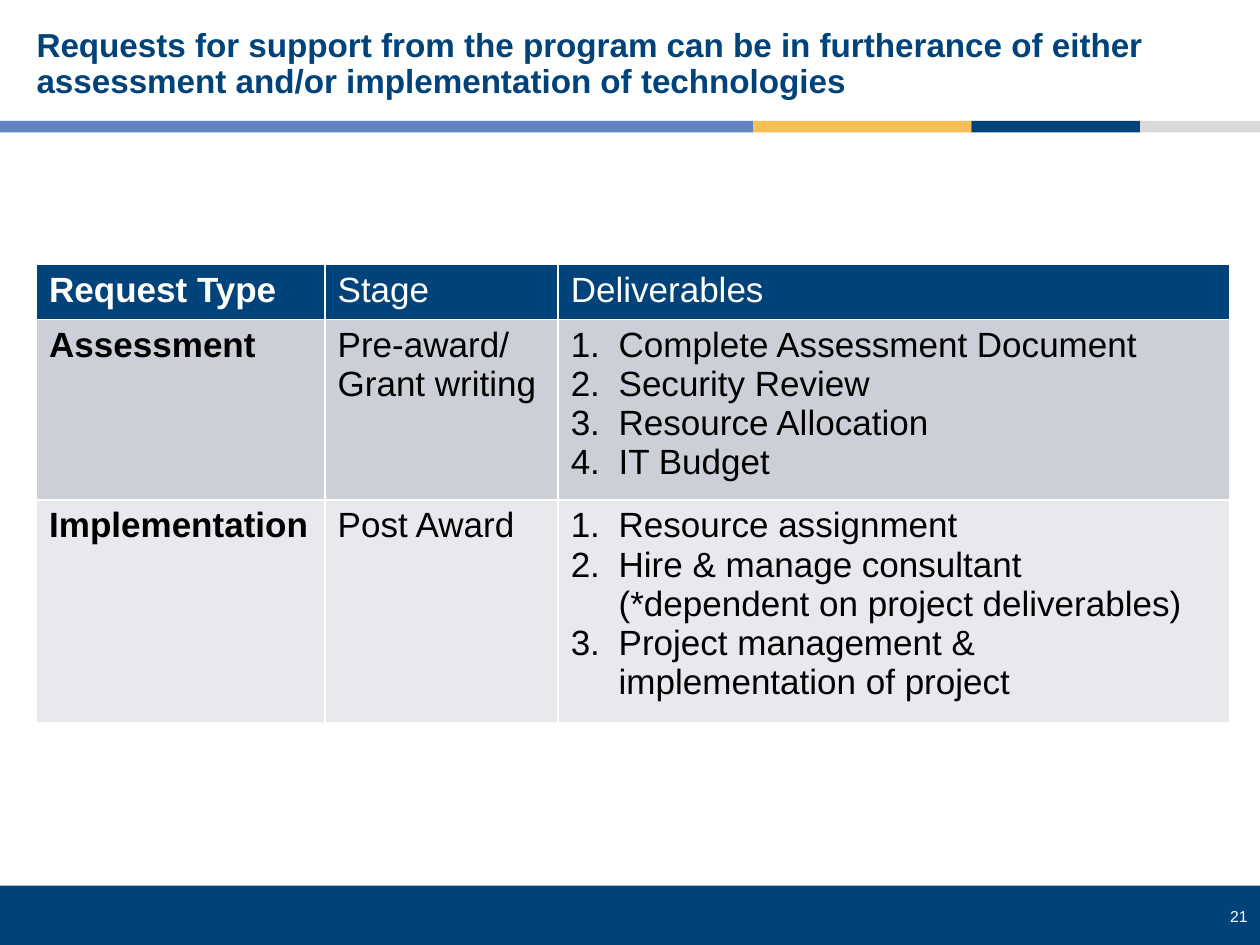
"""Build the slide on assessment and implementation requests."""
from lxml.etree import SubElement
from pptx import Presentation
from pptx.dml.color import RGBColor
from pptx.enum.shapes import MSO_SHAPE
from pptx.enum.text import MSO_ANCHOR, MSO_AUTO_SIZE, PP_ALIGN
from pptx.oxml.ns import qn
from pptx.util import Inches, Pt

NAVY, BLUE, GOLD, GREY = "00437B", "6283C2", "F8BF56", "D9D9D9"
WHITE, BLACK = "FFFFFF", "000000"


def color(value):
    return RGBColor.from_string(value)


def style(paragraph, size, value, bold=False):
    font = paragraph.font
    font.name, font.size, font.bold = "Arial", Pt(size), bold
    font.color.rgb = color(value)


presentation = Presentation()
presentation.slide_width = Inches(10)
presentation.slide_height = Inches(7.5)
slide = presentation.slides.add_slide(presentation.slide_layouts[5])

bands = [
    (0, 7.03, 10, 0.47, NAVY),
    (0, 0.96, 5.98, 0.09, BLUE),
    (5.98, 0.96, 1.73, 0.09, GOLD),
    (7.71, 0.96, 1.34, 0.09, NAVY),
    (9.05, 0.96, 0.95, 0.09, GREY),
]
for left, top, width, height, fill in bands:
    band = slide.shapes.add_shape(
        MSO_SHAPE.RECTANGLE, Inches(left), Inches(top), Inches(width), Inches(height)
    )
    band.shadow.inherit = False
    band.fill.solid()
    band.fill.fore_color.rgb = color(fill)
    band.line.fill.background()

title = slide.shapes.title
title.left, title.top = Inches(0.19), Inches(0.17)
title.width, title.height = Inches(9.57), Inches(0.69)
title.text_frame.text = (
    "Requests for support from the program can be in furtherance of either "
    "assessment and/or implementation of technologies"
)
title.text_frame.auto_size = MSO_AUTO_SIZE.NONE
title.text_frame.vertical_anchor = MSO_ANCHOR.MIDDLE
paragraph = title.text_frame.paragraphs[0]
paragraph.alignment = PP_ALIGN.LEFT
paragraph.line_spacing = 0.9
style(paragraph, 19, NAVY, True)

number = slide.shapes.add_textbox(Inches(9.31), Inches(7.15), Inches(0.69), Inches(0.25))
number.text_frame.word_wrap = True
number.text_frame.text = "21"
paragraph = number.text_frame.paragraphs[0]
paragraph.alignment = PP_ALIGN.RIGHT
style(paragraph, 9, WHITE)

rows = [
    ("Request Type", "Stage", "Deliverables"),
    (
        "Assessment",
        "Pre-award/\nGrant writing",
        "Complete Assessment Document\nSecurity Review\nResource Allocation\nIT Budget",
    ),
    (
        "Implementation",
        "Post Award",
        "Resource assignment\n"
        "Hire & manage consultant (*dependent on project deliverables)\n"
        "Project management & implementation of project",
    ),
]
row_fills = [NAVY, "CCCFD7", "E7E9EC"]
table = slide.shapes.add_table(
    3, 3, Inches(0.29), Inches(2.1), Inches(9.47), Inches(3.39)
).table
for column, width in zip(table.columns, (2.29, 1.85, 5.33)):
    column.width = Inches(width)
for row, height in zip(table.rows, (0.41, 1.34, 1.64)):
    row.height = Inches(height)

for row_index, texts in enumerate(rows):
    for column_index, text in enumerate(texts):
        cell = table.cell(row_index, column_index)
        cell.text = text
        properties = cell._tc.get_or_add_tcPr()
        for side in ("a:lnL", "a:lnR", "a:lnT", "a:lnB"):
            border = SubElement(properties, qn(side), w=str(Pt(1)))
            border_fill = SubElement(border, qn("a:solidFill"))
            SubElement(border_fill, qn("a:srgbClr"), val=WHITE)
        cell.fill.solid()
        cell.fill.fore_color.rgb = color(row_fills[row_index])
        for paragraph in cell.text_frame.paragraphs:
            if row_index and column_index == 2:
                paragraph_properties = paragraph._p.get_or_add_pPr()
                paragraph_properties.set("marL", str(Inches(0.38)))
                paragraph_properties.set("indent", str(Inches(-0.38)))
                SubElement(paragraph_properties, qn("a:buFont"), typeface="+mj-lt")
                SubElement(paragraph_properties, qn("a:buAutoNum"), type="arabicPeriod")
            style(paragraph, 20, BLACK if row_index else WHITE, column_index == 0)

presentation.save("out.pptx")
